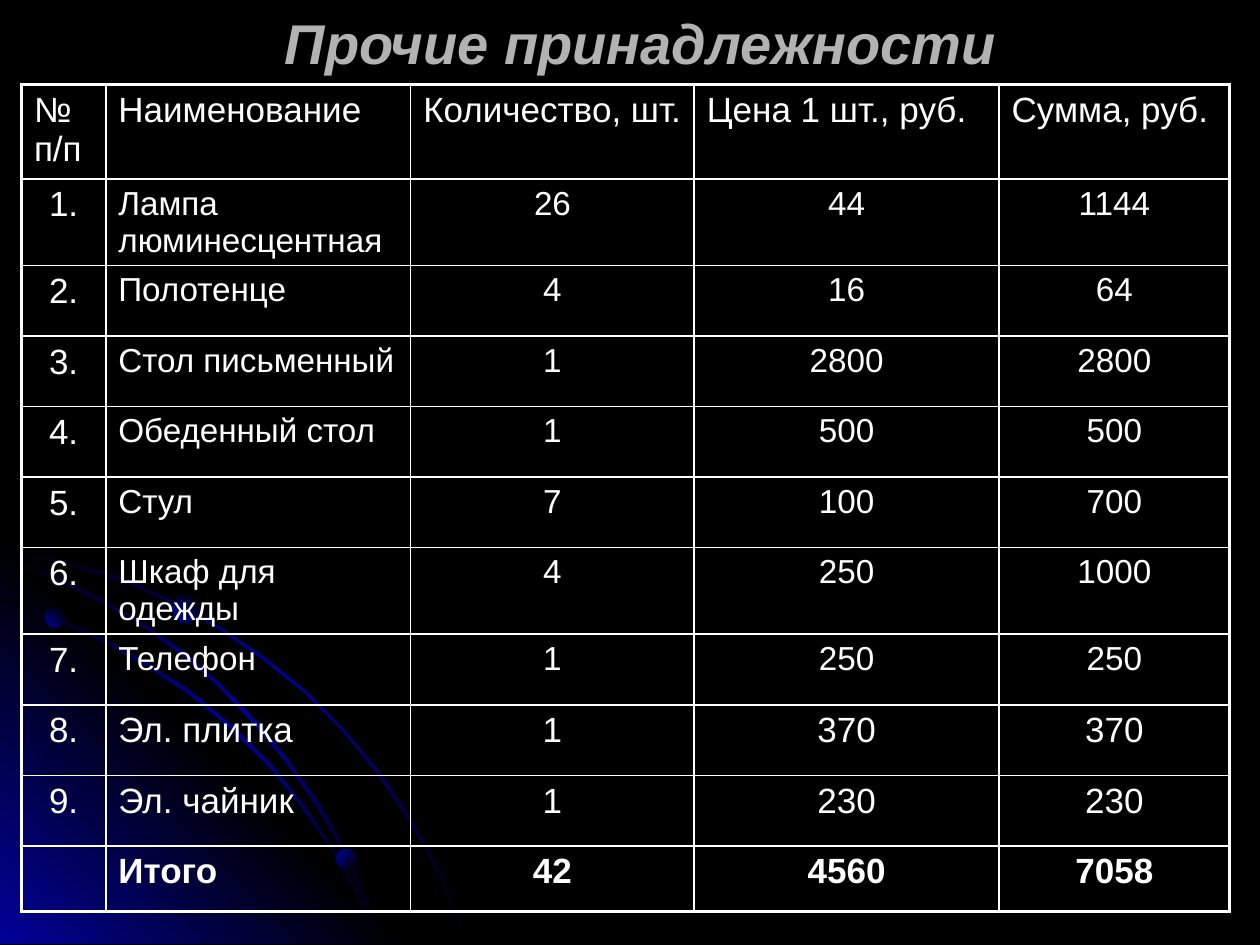
from dataclasses import dataclass

from lxml import etree
from pptx import Presentation
from pptx.dml.color import RGBColor
from pptx.enum.shapes import MSO_SHAPE
from pptx.enum.text import MSO_ANCHOR, PP_ALIGN
from pptx.oxml.ns import qn
from pptx.util import Pt

OVAL = MSO_SHAPE.OVAL
MIDDLE = MSO_ANCHOR.MIDDLE
LEFT, CENTER = PP_ALIGN.LEFT, PP_ALIGN.CENTER
PX = 9144
TITLE_ONLY = 5
NO_STYLE = "{2D5ABB26-0587-4C30-8999-92F81FD0307C}"


@dataclass(frozen=True)
class Theme:
    font: str = "Arial"
    black: str = "000000"
    glow: str = "010199"
    text: str = "FFFFFF"
    title: str = "B2B2B2"
    title_size: int = 32
    main_size: int = 20
    item_size: int = 19
    inner_line: float = 1
    outer_line: float = 2.25


THEME = Theme()

HEADER = ["№ п/п", "Наименование", "Количество, шт.", "Цена 1 шт., руб.", "Сумма, руб."]
GOODS = [
    ("Лампа люминесцентная", 26, 44, 1144),
    ("Полотенце", 4, 16, 64),
    ("Стол письменный", 1, 2800, 2800),
    ("Обеденный стол", 1, 500, 500),
    ("Стул", 7, 100, 700),
    ("Шкаф для одежды", 4, 250, 1000),
    ("Телефон", 1, 250, 250),
    ("Эл. плитка", 1, 370, 370),
    ("Эл. чайник", 1, 230, 230),
]
TOTAL = ["", "Итого", 42, 4560, 7058]
SMALL_ROWS = range(1, 8)
COLUMN_WIDTHS = [67, 242, 225, 242, 183]
ROW_HEIGHTS = [75, 59, 56, 56, 56, 56, 59, 56, 56, 56, 52]

OUTER_ARC = [
    (57, 447), (28, 441), (0, 435), (0, 438), (28, 443), (56, 449), (97, 461),
    (135, 478), (173, 499), (208, 523), (241, 549), (271, 579), (298, 612),
    (323, 649), (337, 673), (350, 698), (360, 723), (370, 749), (372, 749),
    (362, 723), (352, 698), (339, 673), (325, 648), (300, 611), (272, 578),
    (242, 548), (209, 521), (174, 497), (136, 477), (98, 459),
]
CORNER = [(322, 749), (0, 749), (0, 427)]
INNER_ARC = [
    (285, 714), (294, 732), (301, 749), (303, 749), (296, 730), (286, 712),
    (266, 676), (242, 640), (215, 606), (184, 576), (152, 549), (117, 526),
    (79, 505), (41, 488), (0, 475), (0, 477), (39, 490), (77, 507), (115, 528),
    (150, 551), (183, 578), (213, 608), (240, 641), (265, 677),
]
MIDDLE_ARC = [
    (0, 442), (0, 444), (36, 457), (74, 475), (109, 494), (142, 518), (173, 544),
    (202, 575), (227, 605), (252, 641), (267, 667), (280, 694), (292, 722),
    (301, 749), (303, 749), (294, 720), (282, 693), (269, 665), (254, 639),
    (229, 603), (204, 573), (175, 543), (144, 516), (111, 493), (76, 473), (39, 455),
]
ARC_COLORS = [THEME.black, THEME.glow, THEME.black]
CORNER_COLORS = [THEME.glow, THEME.black, THEME.glow]
BEAD_COLORS = [THEME.glow, THEME.black]
CURVES = [
    (OUTER_ARC, ARC_COLORS, 45),
    (CORNER, CORNER_COLORS, 315),
    (INNER_ARC, ARC_COLORS, 45),
    (MIDDLE_ARC, ARC_COLORS, 45),
]
BEADS = [(36, 483, 15, 315), (267, 674, 16, 45), (137, 473, 21, 315)]


def px(*lengths):
    return [length * PX for length in lengths]


def format_text(frame, align, color, **font_values):
    paragraph = frame.paragraphs[0]
    paragraph.alignment = align
    for run in paragraph.runs:
        run.font.color.rgb = RGBColor.from_string(color)
        for name, value in {"name": THEME.font, **font_values}.items():
            setattr(run.font, name, value)


def paint_gradient(shape, colors, angle):
    shape.shadow.inherit = False
    shape.line.fill.background()
    shape.fill.gradient()
    gradient = shape.fill.gradient_stops
    stop_list = shape.element.spPr.find(qn("a:gradFill")).find(qn("a:gsLst"))
    while len(gradient) < len(colors):
        stop_list.append(etree.fromstring(etree.tostring(stop_list[0])))
        gradient = shape.fill.gradient_stops
    for index, (stop, color) in enumerate(zip(gradient, colors)):
        stop.position = index / (len(colors) - 1)
        stop.color.rgb = RGBColor.from_string(color)
    shape.fill.gradient_angle = 360 - angle


def add_curve(slide, points, colors, angle):
    outline = slide.shapes.build_freeform(*points[0], scale=PX)
    outline.add_line_segments(points[1:], close=True)
    paint_gradient(outline.convert_to_shape(), colors, angle)


def add_bead(slide, left, top, size, angle):
    bead = slide.shapes.add_shape(OVAL, *px(left, top, size, size))
    paint_gradient(bead, BEAD_COLORS, angle)


def set_title(slide, text):
    title = slide.shapes.title
    place = dict(zip(("left", "top", "width", "height"), px(50, 0, 917, 67)))
    for name, value in place.items():
        setattr(title, name, value)
    title.text_frame.text = text
    title.text_frame.vertical_anchor = MIDDLE
    format_text(title.text_frame, CENTER, THEME.title,
                size=Pt(THEME.title_size), bold=True, italic=True)


def set_borders(cell, outer_sides):
    properties = cell._tc.get_or_add_tcPr()
    for index, side in enumerate("LRTB"):
        width = THEME.outer_line if side in outer_sides else THEME.inner_line
        border = etree.Element(qn(f"a:ln{side}"), w=str(Pt(width)))
        fill = etree.SubElement(border, qn("a:solidFill"))
        etree.SubElement(fill, qn("a:srgbClr"), val=THEME.text)
        properties.insert(index, border)


def fill_cell(cell, value, row, column, last_row, last_column):
    cell.text = str(value)
    small = row in SMALL_ROWS and column > 0
    size = THEME.item_size if small else THEME.main_size
    align = LEFT if row == 0 or column == 1 else CENTER
    format_text(cell.text_frame, align, THEME.text, size=Pt(size), bold=row == last_row)
    cell.fill.background()
    edges = {"L": column == 0, "R": column == last_column,
             "T": row == 0, "B": row == last_row}
    set_borders(cell, [side for side, outer in edges.items() if outer])


def add_price_table(slide):
    numbered = [[f"{number}.", *item] for number, item in enumerate(GOODS, 1)]
    records = [HEADER, *numbered, TOTAL]
    frame = slide.shapes.add_table(
        len(records), len(HEADER), *px(17, 67, sum(COLUMN_WIDTHS), sum(ROW_HEIGHTS)))
    prices = frame.table
    prices.first_row = prices.horz_banding = False
    prices._tbl.tblPr.find(qn("a:tableStyleId")).text = NO_STYLE
    for column, width in zip(prices.columns, px(*COLUMN_WIDTHS)):
        column.width = width
    for row, height in zip(prices.rows, px(*ROW_HEIGHTS)):
        row.height = height
    for row, record in enumerate(records):
        for column, value in enumerate(record):
            fill_cell(prices.cell(row, column), value, row, column,
                      len(records) - 1, len(HEADER) - 1)


def main():
    deck = Presentation()
    deck.slide_width, deck.slide_height = px(1000, 750)
    slide = deck.slides.add_slide(deck.slide_layouts[TITLE_ONLY])
    backdrop = slide.background.fill
    backdrop.solid()
    backdrop.fore_color.rgb = RGBColor.from_string(THEME.black)
    for curve in CURVES:
        add_curve(slide, *curve)
    for bead in BEADS:
        add_bead(slide, *bead)
    set_title(slide, "Прочие принадлежности")
    add_price_table(slide)
    deck.save("out.pptx")


if __name__ == "__main__":
    main()
